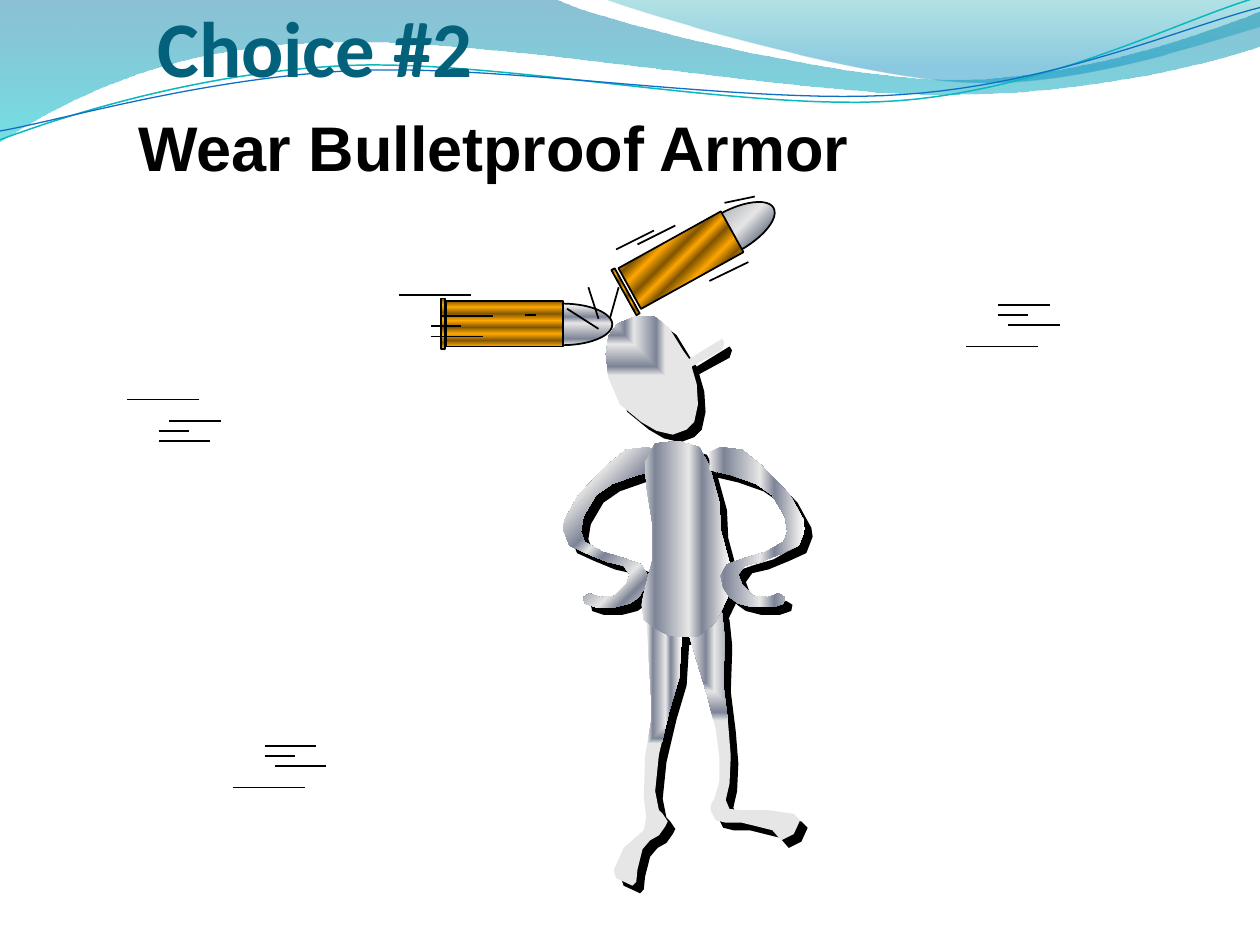
from pptx import Presentation
from pptx import util as u
from pptx.dml.color import RGBColor
from pptx.enum import shapes, text
from pptx.oxml import parse_xml
from pptx.oxml.ns import nsdecls, qn

BLACK = RGBColor(0, 0, 0)
TITLE = RGBColor(0x04, 0x61, 0x7B)
TEAL = RGBColor(0x0A, 0xB8, 0xBF)
BLUE = RGBColor(0x0F, 0x6F, 0xC6)
DEEP = RGBColor(0x00, 0x74, 0xA1)
AQUA = RGBColor(0x00, 0xC6, 0xCF)
SEA = RGBColor(0x00, 0xA1, 0xA9)
SKY = RGBColor(0x00, 0x8B, 0xBF)
WHITE = RGBColor(255, 255, 255)
LIGHT = RGBColor(0xE6, 0xE6, 0xE6)
STEEL = RGBColor(0x7D, 0x84, 0x96)
BROWN = RGBColor(0x82, 0x56, 0x00)
GOLD = RGBColor(0xFF, 0xA8, 0x00)


def alternate(positions, *colors):
    return [(p, colors[i % len(colors)]) for i, p in enumerate(positions)]


CHROME = [(0, WHITE)] + alternate([7, 32, 47, 85, 100], LIGHT, STEEL)
SILVER = alternate([0, 15, 53, 68, 93], LIGHT, STEEL) + [(100, WHITE)]
ARM = [(0, WHITE)] + alternate([4, 16, 24, 43, 50, 58, 76, 84, 96], LIGHT, STEEL) + [(100, WHITE)]
BRASS = alternate([0, 13, 28, 43, 58, 72, 87, 100], BROWN, GOLD)
FINE_BRASS = alternate([0, 6, 14, 22, 29, 36, 44, 50, 56, 64, 71, 79], BROWN, GOLD)

HEAD = [(5.42, 2.78), (5.31, 2.6), (5.19, 2.51), (5.05, 2.51), (4.9, 2.57), (4.83, 2.67),
        (4.81, 2.81), (4.83, 3), (4.92, 3.21), (5.09, 3.35), (5.21, 3.42), (5.34, 3.45),
        (5.45, 3.41), (5.51, 3.35), (5.54, 3.21), (5.53, 3.05), (5.49, 2.91), (5.73, 2.78),
        (5.75, 2.72), (5.73, 2.69), (5.47, 2.85)]
LEFT_ARM = [(5.23, 3.59), (5.14, 3.55), (4.97, 3.57), (4.82, 3.69), (4.59, 3.93), (4.48, 4.13),
            (4.47, 4.2), (4.52, 4.33), (4.65, 4.39), (4.82, 4.46), (4.95, 4.49), (5, 4.56),
            (4.97, 4.64), (4.88, 4.73), (4.76, 4.74), (4.68, 4.71), (4.63, 4.74), (4.64, 4.79),
            (4.73, 4.82), (4.88, 4.82), (5, 4.79), (5.07, 4.74), (5.12, 4.66), (5.14, 4.57),
            (5.09, 4.48), (4.95, 4.43), (4.78, 4.38), (4.64, 4.3), (4.61, 4.22), (4.63, 4.1),
            (4.73, 3.93), (4.86, 3.84), (5.06, 3.77), (5.23, 3.73)]
RIGHT_ARM = [(10.86 - x, y) for x, y in LEFT_ARM]
LEFT_LEG = [(5.39, 4.8), (5.25, 4.77), (5.17, 4.8), (5.13, 4.92), (5.17, 5.56), (5.17, 5.72),
            (5.12, 6), (5.11, 6.33), (5.13, 6.49), (5.11, 6.59), (4.95, 6.73), (4.87, 6.91),
            (4.89, 6.97), (5.02, 7.03), (5.05, 7), (5.06, 6.9), (5.1, 6.74), (5.16, 6.67),
            (5.23, 6.63), (5.28, 6.56), (5.3, 6.52), (5.26, 6.46), (5.23, 6.43), (5.2, 6.28),
            (5.23, 5.99), (5.31, 5.65), (5.39, 5.38), (5.41, 5.05)]
RIGHT_LEG = [(5.75, 5.05), (5.73, 4.86), (5.63, 4.77), (5.47, 4.78), (5.46, 4.86), (5.47, 5.04),
             (5.55, 5.31), (5.61, 5.51), (5.68, 5.78), (5.71, 6.01), (5.71, 6.2), (5.67, 6.34),
             (5.64, 6.39), (5.64, 6.43), (5.68, 6.51), (5.76, 6.53), (5.89, 6.53), (6.13, 6.59),
             (6.2, 6.67), (6.3, 6.62), (6.35, 6.51), (6.3, 6.46), (6.1, 6.43), (5.88, 6.43),
             (5.79, 6.42), (5.76, 6.35), (5.79, 6.22), (5.8, 6), (5.78, 5.75), (5.74, 5.43),
             (5.75, 5.14)]
TORSO = [(5.71, 3.99), (5.63, 3.7), (5.55, 3.55), (5.38, 3.5), (5.2, 3.52), (5.12, 3.67),
         (5.13, 3.86), (5.18, 4.17), (5.18, 4.44), (5.12, 4.67), (5.09, 4.8), (5.11, 4.92),
         (5.19, 4.98), (5.3, 5.04), (5.4, 5.06), (5.53, 5.06), (5.68, 4.94), (5.8, 4.69),
         (5.79, 4.47), (5.72, 4.21)]
BODY = [(HEAD, CHROME, dict(focus=(0, 0, 100, 100))), (LEFT_ARM, ARM, dict(angle=45)),
        (LEFT_LEG, CHROME, dict(focus=(100, 0, 0, 100))),
        (RIGHT_LEG, CHROME, dict(focus=(0, 0, 100, 100))),
        (TORSO, SILVER, dict(angle=0)), (RIGHT_ARM, SILVER, dict(angle=0))]

WAVE = [(0, 0), (4.4, -0.01), (4.76, 0.17, 6.64, 0.63, 7.58, 0.63), (8.53, 0.63, 9.58, 0.26, 10, 0.09),
        (10.01, 0.36), (9.83, 0.44, 8.7, 0.76, 7.46, 0.75), (6.22, 0.75, 3.82, 0.28, 2.57, 0.34),
        (1.29, 0.36, 0.46, 0.83, -0.01, 1.13)]
CREST = [(4.79, -0.01), (5.09, 0.11, 6.82, 0.62, 7.69, 0.65), (8.56, 0.69, 9.61, 0.32, 10, 0.21), (10, 0)]
TEAL_CURVE = [(0, 1.11), (0.48, 0.93, 1.58, 0.57, 2.77, 0.52), (3.95, 0.47, 5.93, 0.89, 7.13, 0.8),
              (8.33, 0.71, 9.38, 0.15, 9.98, -0.02)]
BLUE_CURVE = [(0, 1.04), (0.47, 0.96, 1.64, 0.61, 2.83, 0.56), (4.03, 0.51, 5.97, 0.84, 7.17, 0.75),
              (8.36, 0.67, 9.41, 0.21, 10, 0.06)]


def trace(steps, n=24):
    points = []
    for step in steps:
        if len(step) == 2:
            points.append(step)
            continue
        knots = [points[-1], step[:2], step[2:4], step[4:]]
        for t in (i / n for i in range(1, n + 1)):
            weights = ((1 - t) ** 3, 3 * t * (1 - t) ** 2, 3 * t * t * (1 - t), t ** 3)
            points.append(tuple(sum(w * k[a] for w, k in zip(weights, knots)) for a in (0, 1)))
    return points


def put_text(tf, content, font="Calibri", size=18, color=BLACK, bold=True,
             anchor=text.MSO_ANCHOR.MIDDLE, insets=(0.1, 0.05, 0.1, 0.05)):
    tf.word_wrap = True
    tf.auto_size = text.MSO_AUTO_SIZE.NONE
    tf.vertical_anchor = anchor
    tf.margin_left, tf.margin_top, tf.margin_right, tf.margin_bottom = map(u.Inches, insets)
    p = tf.paragraphs[0]
    p.alignment = text.PP_ALIGN.LEFT
    r = p.add_run()
    r.text = content
    r.font.name, r.font.size, r.font.bold = font, u.Pt(size), bold
    r.font.color.rgb = color


class Canvas:
    def __init__(self, s, line_width=1):
        self.s = s
        self.line_width = line_width

    def paint(self, sp, stops=None, angle=0, focus=None, line=None, width=None):
        sp.shadow.inherit = False
        if stops is None:
            sp.fill.background()
        elif isinstance(stops, RGBColor):
            sp.fill.solid()
            sp.fill.fore_color.rgb = stops
        else:
            sp.fill.gradient()
            old = sp._element.spPr.find(qn("a:gradFill"))
            marks = "".join(
                f'<a:gs pos="{pos * 1000}"><a:srgbClr val="{color}">'
                f'<a:alpha val="{(alpha or [100])[0] * 1000}"/></a:srgbClr></a:gs>'
                for pos, color, *alpha in stops)
            shade = f'<a:lin ang="{angle * 60000}" scaled="1"/>'
            if focus:
                sides = " ".join(f'{k}="{v * 1000}"' for k, v in zip("ltrb", focus))
                shade = f'<a:path path="rect"><a:fillToRect {sides}/></a:path>'
            new = parse_xml(f'<a:gradFill {nsdecls("a")} rotWithShape="0">'
                            f'<a:gsLst>{marks}</a:gsLst>{shade}</a:gradFill>')
            old.getparent().replace(old, new)
        if line is None:
            sp.line.fill.background()
        else:
            sp.line.color.rgb = line
            sp.line.width = u.Pt(width or self.line_width)

    def outline(self, points, close=True, shift=0, **style):
        pts = [(u.Inches(x + shift), u.Inches(y + shift)) for x, y in points]
        builder = self.s.shapes.build_freeform(*pts[0], scale=1.0)
        builder.add_line_segments(pts[1:], close=close)
        self.paint(builder.convert_to_shape(), **style)

    def preset(self, kind, box, rotation=0, **style):
        sp = self.s.shapes.add_shape(kind, *map(u.Inches, box))
        sp.rotation = rotation
        self.paint(sp, line=BLACK, **style)

    def line(self, *ends):
        c = self.s.shapes.add_connector(shapes.MSO_CONNECTOR.STRAIGHT, *map(u.Inches, ends))
        c.line.color.rgb = BLACK
        c.line.width = u.Pt(self.line_width)
        c._element.spPr.append(parse_xml(f'<a:effectLst {nsdecls("a")}/>'))

    def speed_lines(self, left, y, direction=1):
        for dx, dy, length in ((0.25, 0, 0.41), (0, 0.33, 0.57), (0.25, 0.08, 0.24), (0.33, 0.16, 0.41)):
            level = y + direction * dy
            self.line(left + dx, level, left + dx + length, level)

    def bullet(self, tip, casing, rim, tip_stops, casing_stops, angle, rotation=0):
        kinds = shapes.MSO_SHAPE
        for kind, box, stops in ((kinds.OVAL, tip, tip_stops), (kinds.RECTANGLE, casing, casing_stops),
                                 (kinds.RECTANGLE, rim, BRASS)):
            self.preset(kind, box, rotation, stops=stops, angle=angle)

    def title(self, box, content, **style):
        sp = self.s.shapes.title
        self.s.shapes._spTree.append(sp._element)
        sp.left, sp.top, sp.width, sp.height = map(u.Inches, box)
        put_text(sp.text_frame, content, **style)

    def label(self, box, content, **style):
        put_text(self.s.shapes.add_textbox(*map(u.Inches, box)).text_frame, content, **style)


def main():
    prs = Presentation()
    prs.slide_width, prs.slide_height = u.Inches(10), u.Inches(7.5)
    c = Canvas(prs.slides.add_slide(prs.slide_layouts[5]))

    c.outline(trace(WAVE), stops=[(0, DEEP, 45), (100, AQUA, 55)], angle=90)
    c.outline(trace(CREST), stops=[(0, SEA, 30), (80, SKY, 45)], angle=90)
    c.outline(trace(TEAL_CURVE), close=False, line=TEAL, width=0.85)
    c.outline(trace(BLUE_CURVE), close=False, line=BLUE, width=0.75)

    c.bullet((4.06, 2.41, 0.8, 0.33), (3.54, 2.39, 0.93, 0.36), (3.5, 2.37, 0.03, 0.4), CHROME, BRASS, 90)
    for left, y, direction in ((1.01, 3.5, -1), (7.67, 2.42, 1), (1.85, 5.92, 1)):
        c.speed_lines(left, y, direction)
    for ends in ((4.84, 2.53, 4.91, 2.28), (4.75, 2.61, 4.5, 2.45),
                 (4.25, 2.5, 4.17, 2.5), (4.75, 2.53, 4.67, 2.28)):
        c.line(*ends)

    for points, _, _ in BODY:
        c.outline(points, shift=0.06, stops=BLACK)
    for points, stops, style in BODY:
        c.outline(points, stops=stops, **style)

    c.title((1.25, 0.5, 8.83, 0.75), "Choice #2", size=45, color=TITLE,
            anchor=text.MSO_ANCHOR.BOTTOM, insets=(0, 0.05, 0, 0.51))
    c.speed_lines(3.17, 2.67, -1)
    c.bullet((5.39, 1.68, 0.8, 0.33), (4.94, 1.88, 0.93, 0.37), (4.95, 2.11, 0.03, 0.41),
             SILVER, FINE_BRASS, 45, rotation=331)
    for ends in ((4.89, 1.98, 5.19, 1.83), (5.06, 1.94, 5.36, 1.79),
                 (5.63, 2.23, 5.94, 2.08), (5.75, 1.61, 5.99, 1.56)):
        c.line(*ends)
    c.label((1, 0.83, 8.83, 0.67), "Wear Bulletproof Armor", font="Arial", size=36)
    prs.save("out.pptx")


if __name__ == "__main__":
    main()
